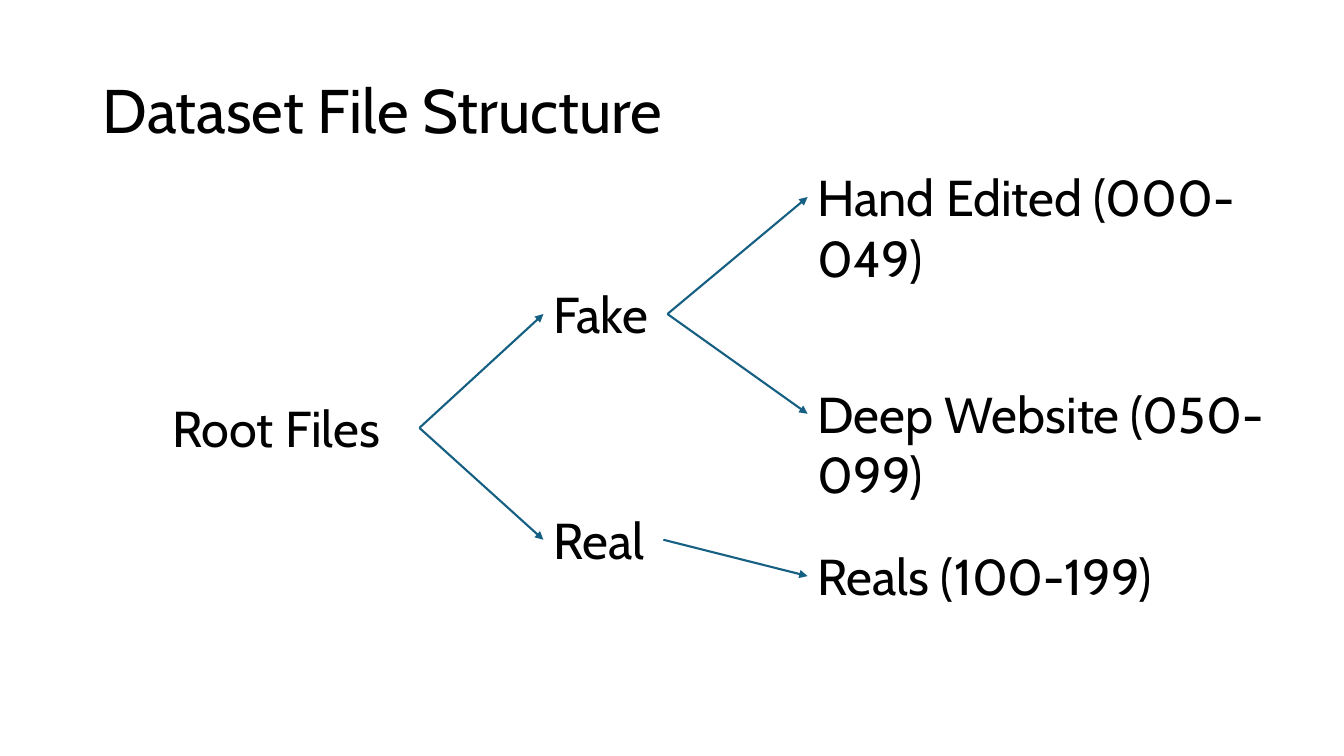
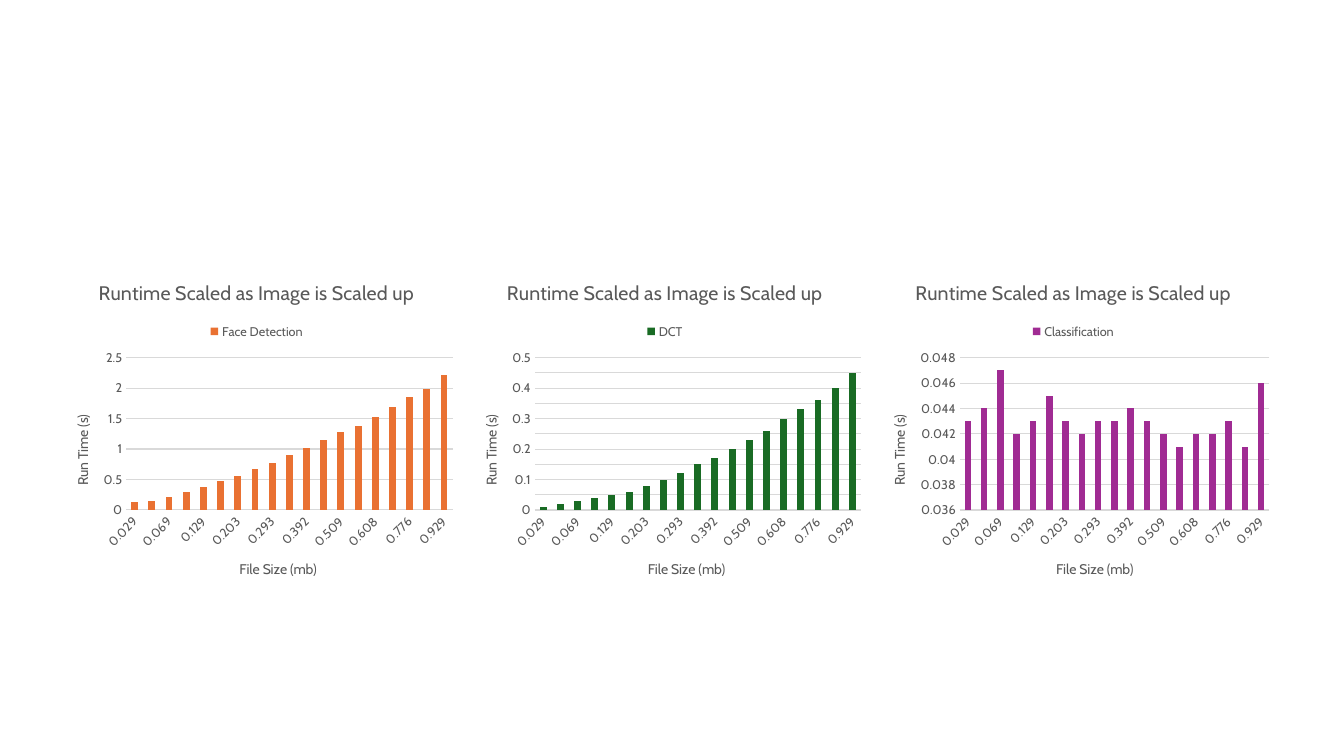
from lxml.etree import SubElement
from pptx import Presentation
from pptx.chart.data import CategoryChartData
from pptx.dml.color import RGBColor
from pptx.enum.chart import XL_CHART_TYPE as Kind, XL_LEGEND_POSITION as Spot, XL_TICK_MARK as Tick
from pptx.enum.shapes import MSO_CONNECTOR as Conn
from pptx.enum.text import MSO_ANCHOR as Anchor
from pptx.oxml.ns import qn
from pptx.util import Inches, Pt

FONT = "Cabin"
BLACK = RGBColor(0x00, 0x00, 0x00)
GRAY = RGBColor(0x59, 0x59, 0x59)
PALE = RGBColor(0xD9, 0xD9, 0xD9)
BLUE = RGBColor(0x15, 0x60, 0x82)
ORANGE = RGBColor(0xE9, 0x71, 0x32)
GREEN = RGBColor(0x19, 0x6B, 0x24)
PURPLE = RGBColor(0xA0, 0x2B, 0x93)

TITLE = "Dataset File Structure"
NODE_H = 0.71
NODES = {
    "root": ("Root Files", 1.61, 3.89, 2.55),
    "fake": ("Fake", 5.39, 2.76, 1.23),
    "real": ("Real", 5.39, 5, 1.19),
    "edit": ("Hand Edited (000-049)", 8.01, 1.6, 5.03),
    "deep": ("Deep Website (050-099)", 8.01, 3.75, 5.46),
    "reals": ("Reals (100-199)", 8.01, 5.36, 3.85),
}
LINKS = [("root", "fake"), ("root", "real"), ("fake", "edit"),
         ("fake", "deep"), ("real", "reals")]

HEAD = "Runtime Scaled as Image is Scaled up"
X_NAME = "File Size (mb)"
Y_NAME = "Run Time (s)"
SIZES = [0.029, 0.049, 0.069, 0.102, 0.129, 0.17, 0.203, 0.25, 0.293, 0.346,
         0.392, 0.452, 0.509, 0.572, 0.608, 0.704, 0.776, 0.853, 0.929]
CHARTS = [
    ("Face Detection", ORANGE, (0, 2.5, 0.5),
     [0.13, 0.15, 0.22, 0.3, 0.37, 0.48, 0.56, 0.68, 0.77, 0.9,
      1.02, 1.15, 1.28, 1.38, 1.52, 1.69, 1.86, 1.98, 2.21]),
    ("DCT", GREEN, (0, 0.5, 0.05),
     [0.01, 0.02, 0.03, 0.04, 0.05, 0.06, 0.08, 0.1, 0.12, 0.15,
      0.17, 0.2, 0.23, 0.26, 0.3, 0.33, 0.36, 0.4, 0.45]),
    ("Classification", PURPLE, (0.036, 0.048, 0.002),
     [0.043, 0.044, 0.047, 0.042, 0.043, 0.045, 0.043, 0.042, 0.043, 0.043,
      0.044, 0.043, 0.042, 0.041, 0.042, 0.042, 0.043, 0.041, 0.046]),
]
LEFT, TOP, WIDE, HIGH = 0.52, 2.62, 4.05, 3.32


def style(font, size, color):
    font.name, font.size, font.bold = FONT, Pt(size), False
    font.color.rgb = color


def add_text(slide, text, box, size):
    frame = slide.shapes.add_textbox(*map(Inches, box)).text_frame
    frame.word_wrap = True
    para = frame.paragraphs[0]
    para.text = text
    style(para.font, size, BLACK)
    return frame


def add_link(slide, start, end):
    _, x, y, w = NODES[start]
    _, to_x, to_y, _ = NODES[end]
    mid = NODE_H / 2
    ends = map(Inches, (x + w, y + mid, to_x, to_y + mid))
    link = slide.shapes.add_connector(Conn.STRAIGHT, *ends)
    link.line.color.rgb = BLUE
    link.line.width = Pt(1.5)
    props = link._element.spPr
    SubElement(props.find(qn("a:ln")), qn("a:tailEnd"), type="triangle")
    SubElement(props, qn("a:effectLst"))


def set_title(owner, text, size):
    frame = owner.text_frame
    frame.text = text
    style(frame.paragraphs[0].font, size, GRAY)
    return frame._txBody.bodyPr


def style_axis(axis, name):
    axis.major_tick_mark = axis.minor_tick_mark = Tick.NONE
    style(axis.tick_labels.font, 9, GRAY)
    return set_title(axis.axis_title, name, 10)


def add_bars(slide, left, name, color, scale, vals):
    data = CategoryChartData()
    data.categories = SIZES
    data.add_series(name, vals)
    box = map(Inches, (left, TOP, WIDE, HIGH))
    chart = slide.shapes.add_chart(Kind.COLUMN_STACKED, *box, data).chart
    style(chart.font, 10, BLACK)
    chart.has_title = True
    set_title(chart.chart_title, HEAD, 14)
    chart.chart_title.include_in_layout = False
    chart.has_legend = True
    chart.legend.position = Spot.TOP
    chart.legend.include_in_layout = False
    style(chart.legend.font, 9, GRAY)

    plot = chart.plots[0]
    plot.gap_width, plot.overlap = 150, 100
    plot.vary_by_categories = False
    fill = plot.series[0].format.fill
    fill.solid()
    fill.fore_color.rgb = color

    cat, val = chart.category_axis, chart.value_axis
    style_axis(cat, X_NAME)
    cat.format.line.color.rgb = PALE
    cat.format.line.width = Pt(0.75)
    cat._element.txPr.bodyPr.set("rot", "-2700000")

    turn = style_axis(val, Y_NAME)
    turn.set("rot", "-5400000")
    turn.set("vert", "horz")
    val.format.line.fill.background()
    val.minimum_scale, val.maximum_scale, val.major_unit = scale
    val.tick_labels.number_format = "General"
    val.tick_labels.number_format_is_linked = False
    grid = val.major_gridlines.format.line
    grid.color.rgb = PALE
    grid.width = Pt(0.75)


def main():
    deck = Presentation()
    deck.slide_width, deck.slide_height = Inches(13.33), Inches(7.5)
    tree, times = [deck.slides.add_slide(deck.slide_layouts[6]) for _ in range(2)]

    title = add_text(tree, TITLE, (0.92, 0.4, 11.5, 1.45), 44)
    title.vertical_anchor = Anchor.MIDDLE
    title.paragraphs[0].line_spacing = 0.9
    for text, x, y, w in NODES.values():
        add_text(tree, text, (x, y, w, NODE_H), 36)
    for start, end in LINKS:
        add_link(tree, start, end)

    for i, chart in enumerate(CHARTS):
        add_bars(times, LEFT + i * WIDE, *chart)
    deck.save("out.pptx")


if __name__ == "__main__":
    main()
